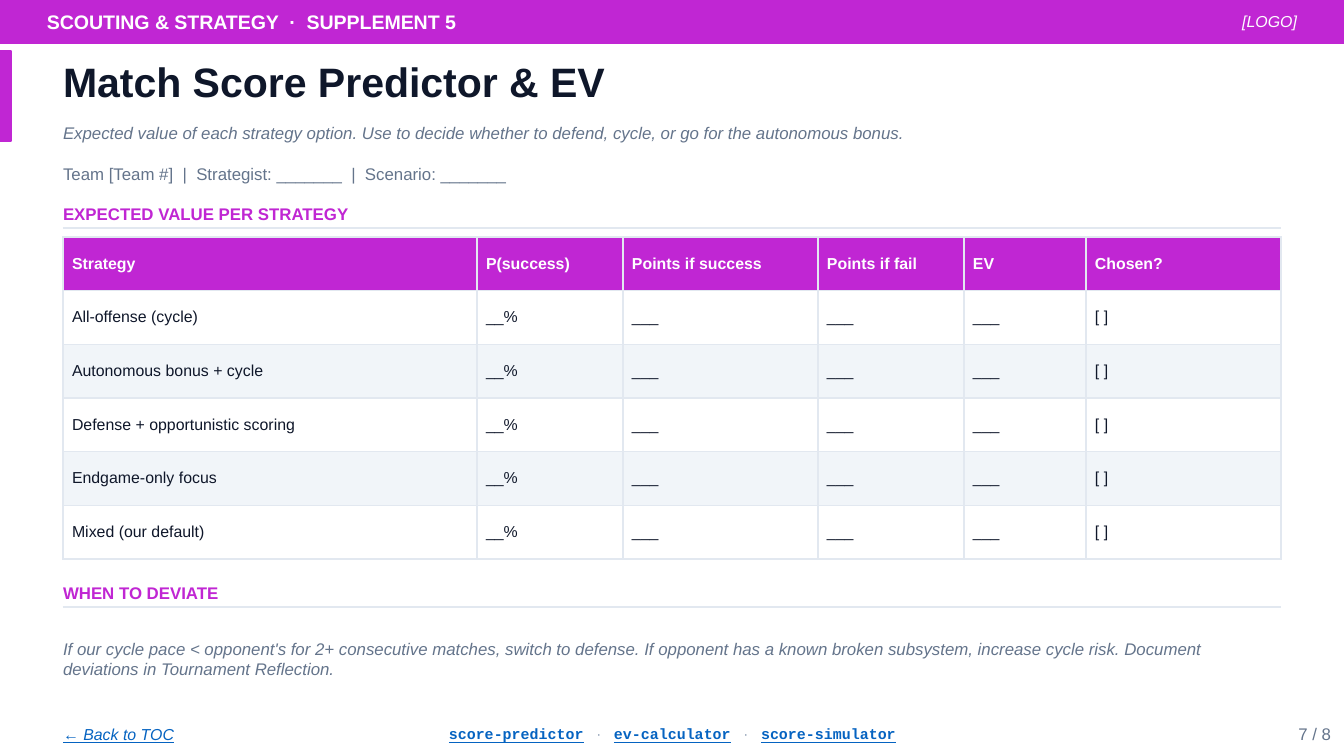
import pptx
import pptx.dml.color
import pptx.enum.shapes
import pptx.enum.text
import pptx.oxml.ns
import pptx.util
from lxml import etree

SCALE = 914400 / 134.4  # EMU in one px
LEFT, WIDTH = 63, 1218  # content column
COLORS = {
    "accent": "C026D3",
    "white": "FFFFFF",
    "ink": "0F172A",
    "muted": "64748B",
    "dot": "94A3B8",
    "link": "0563C1",
    "rule": "E2E8F0",
    "band": "F1F5F9",
}
ALIGN = pptx.enum.text.PP_ALIGN
MIDDLE = pptx.enum.text.MSO_ANCHOR.MIDDLE

COLUMN_WIDTHS = [414, 146, 195, 146, 122, 195]
HEADINGS = ["Strategy", "P(success)", "Points if success", "Points if fail", "EV", "Chosen?"]
STRATEGIES = [
    "All-offense (cycle)",
    "Autonomous bonus + cycle",
    "Defense + opportunistic scoring",
    "Endgame-only focus",
    "Mixed (our default)",
]
BLANKS = ["__%", "___", "___", "___", "[ ]"]
TOOLS = ["score-predictor", "ev-calculator", "score-simulator"]


def px(length):
    return pptx.util.Emu(round(length * SCALE))


def rgb(name):
    return pptx.dml.color.RGBColor.from_string(COLORS[name])


def add_span(para, text, size, color, font="Arial", bold=False, italic=False, underline=False):
    span = para.add_run()
    span.text = text
    span.font.name = font
    span.font.size = pptx.util.Pt(size)
    span.font.bold = bold
    span.font.italic = italic
    span.font.underline = underline
    span.font.color.rgb = rgb(color)


def add_para_box(page, x, y, width, height, align=ALIGN.LEFT):
    """Add an empty text box without margins and return its paragraph."""
    frame = page.shapes.add_textbox(px(x), px(y), px(width), px(height)).text_frame
    frame.word_wrap = True
    frame.vertical_anchor = MIDDLE
    frame.margin_left = frame.margin_right = frame.margin_top = frame.margin_bottom = 0
    para = frame.paragraphs[0]
    para.alignment = align
    return para


def add_bar(page, x, y, width, height):
    kind = pptx.enum.shapes.MSO_SHAPE.RECTANGLE
    bar = page.shapes.add_shape(kind, px(x), px(y), px(width), px(height))
    bar.shadow.inherit = False
    bar.fill.solid()
    bar.fill.fore_color.rgb = rgb("accent")
    bar.line.color.rgb = rgb("accent")
    bar.line.width = pptx.util.Pt(1)


def add_section(page, y, title):
    """Add a section heading with a thin rule below it."""
    add_span(add_para_box(page, LEFT, y, WIDTH, 30), title, 9, "accent", bold=True)
    rule_y = px(y + 29)
    rule = page.shapes.add_connector(
        pptx.enum.shapes.MSO_CONNECTOR.STRAIGHT, px(LEFT), rule_y, px(LEFT + WIDTH), rule_y)
    rule.line.color.rgb = rgb("rule")
    rule.line.width = pptx.util.Pt(0.75)
    etree.SubElement(rule._element.spPr, pptx.oxml.ns.qn("a:effectLst"))


def add_borders(cell):
    qn = pptx.oxml.ns.qn
    properties = cell._tc.get_or_add_tcPr()
    for side in ("a:lnL", "a:lnR", "a:lnT", "a:lnB"):
        line = etree.SubElement(properties, qn(side), w=str(pptx.util.Pt(0.75)))
        fill = etree.SubElement(line, qn("a:solidFill"))
        etree.SubElement(fill, qn("a:srgbClr"), val=COLORS["rule"])


def fill_cell(cell, text, fill, color, bold, margin):
    add_borders(cell)
    cell.fill.solid()
    cell.fill.fore_color.rgb = rgb(fill)
    cell.vertical_anchor = MIDDLE
    cell.margin_left = cell.margin_right = px(9)
    cell.margin_top = cell.margin_bottom = px(margin)
    add_span(cell.text_frame.paragraphs[0], text, 8.5, color, bold=bold)


def add_strategy_table(page, y, height):
    rows = [HEADINGS] + [[strategy] + BLANKS for strategy in STRATEGIES]
    table = page.shapes.add_table(
        len(rows), len(HEADINGS), px(LEFT), px(y), px(WIDTH), px(height)).table
    for column, width in zip(table.columns, COLUMN_WIDTHS):
        column.width = px(width)
    for r, texts in enumerate(rows):
        table.rows[r].height = px(height / len(rows))
        if r == 0:
            look = ("accent", "white", True, 4)
        else:
            look = ("white" if r % 2 else "band", "ink", False, 5)
        for c, text in enumerate(texts):
            fill_cell(table.cell(r, c), text, *look)


def add_footer(page):
    y, height = 715, 38
    add_span(add_para_box(page, 1223, y, 108, height, ALIGN.RIGHT), "7 / 8", 9, "muted")
    add_span(add_para_box(page, LEFT, y, 215, height), "← Back to TOC", 8.5, "link",
             italic=True, underline=True)
    para = add_para_box(page, 296, y, 753, height, ALIGN.CENTER)
    for i, tool in enumerate(TOOLS):
        if i:
            add_span(para, "   ·   ", 8, "dot")
        add_span(para, tool, 8, "link", font="Courier New", bold=True, underline=True)


def main():
    deck = pptx.Presentation()
    deck.slide_width, deck.slide_height = px(1344), px(756)
    page = deck.slides.add_slide(deck.slide_layouts[6])

    # Top band
    add_bar(page, 0, 0, 1344, 43)
    add_span(add_para_box(page, 47, 0, 1102, 43),
             "SCOUTING & STRATEGY  ·  SUPPLEMENT 5", 10.5, "white", bold=True)
    add_span(add_para_box(page, 1176, 0, 121, 43, ALIGN.RIGHT),
             "[LOGO]", 8.5, "white", italic=True)

    # Title block
    add_bar(page, 0, 51, 11, 90)
    add_span(add_para_box(page, LEFT, 51, 1227, 60),
             "Match Score Predictor & EV", 22, "ink", bold=True)
    add_span(add_para_box(page, LEFT, 118, 1227, 30),
             "Expected value of each strategy option. Use to decide whether to defend, "
             "cycle, or go for the autonomous bonus.", 9, "muted", italic=True)
    add_span(add_para_box(page, LEFT, 159, WIDTH, 30),
             "Team [Team #]  |  Strategist: _______  |  Scenario: _______", 9, "muted")

    # Expected values
    add_section(page, 199, "EXPECTED VALUE PER STRATEGY")
    add_strategy_table(page, 237, 322)

    # Deviation rule
    add_section(page, 578, "WHEN TO DEVIATE")
    add_span(add_para_box(page, LEFT, 612, WIDTH, 94),
             "If our cycle pace < opponent's for 2+ consecutive matches, switch to defense. "
             "If opponent has a known broken subsystem, increase cycle risk. "
             "Document deviations in Tournament Reflection.", 9, "muted", italic=True)

    add_footer(page)
    deck.save("out.pptx")


if __name__ == "__main__":
    main()
